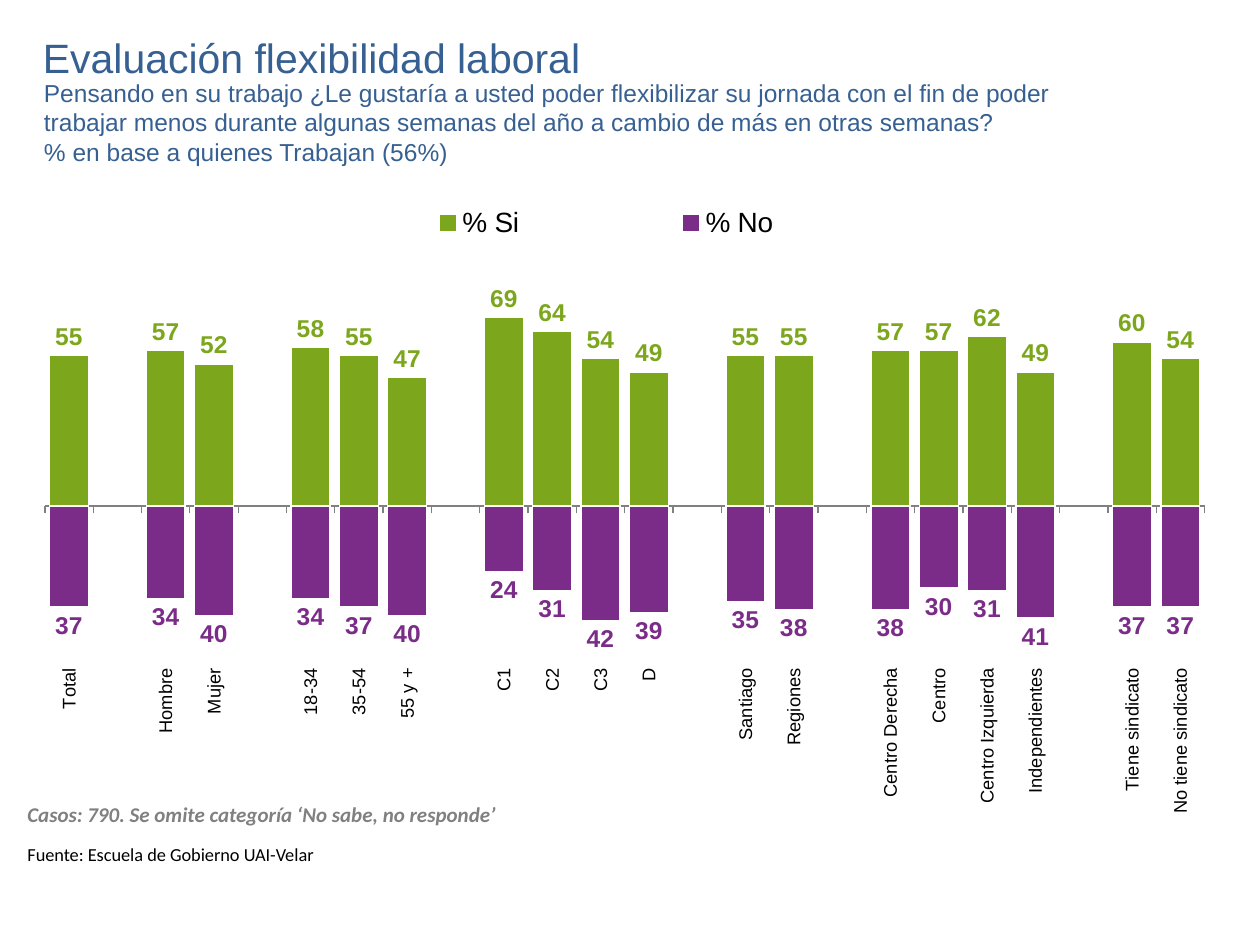
import pptx
import pptx.chart.data
import pptx.dml.color
import pptx.enum.chart
import pptx.enum.text
import pptx.oxml
import pptx.oxml.ns
import pptx.util

Pt = pptx.util.Pt
RGB = pptx.dml.color.RGBColor
BLUE = RGB(0x37, 0x60, 0x92)
GREEN = RGB(0x7C, 0xA7, 0x1D)
PURPLE = RGB(0x7B, 0x2C, 0x88)
GRAY = RGB(0x80, 0x80, 0x80)
BLACK = RGB(0, 0, 0)
WHITE = RGB(255, 255, 255)


def write(shape, lines, size, color, font="Arial", bold=False, italic=False,
          wrap=True, anchor=pptx.enum.text.MSO_ANCHOR.TOP):
    frame = shape.text_frame
    frame.text = "\n".join(lines)
    frame.word_wrap = wrap
    frame.auto_size = pptx.enum.text.MSO_AUTO_SIZE.NONE
    frame.vertical_anchor = anchor
    for para in frame.paragraphs:
        para.alignment = pptx.enum.text.PP_ALIGN.LEFT
        para.font.name = font
        para.font.size = Pt(size)
        para.font.color.rgb = color
        para.font.bold = bold
        para.font.italic = italic


def place(node, x, y, w, h, inner=False):
    for old in node.findall(pptx.oxml.ns.qn("c:layout")):
        node.remove(old)
    target = '<c:layoutTarget val="inner"/>' if inner else ""
    layout = pptx.oxml.parse_xml(
        f'<c:layout {pptx.oxml.ns.nsdecls("c")}><c:manualLayout>{target}'
        '<c:xMode val="edge"/><c:yMode val="edge"/>'
        f'<c:x val="{x}"/><c:y val="{y}"/><c:w val="{w}"/><c:h val="{h}"/>'
        '</c:manualLayout></c:layout>')
    spot = node.find(pptx.oxml.ns.qn("c:legendPos"))
    if spot is None:
        node.insert(0, layout)
    else:
        spot.addnext(layout)


deck = pptx.Presentation()
deck.slide_width, deck.slide_height = Pt(720), Pt(540)
slide = deck.slides.add_slide(deck.slide_layouts[5])

title = slide.shapes.title
title.left, title.top, title.width, title.height = Pt(17.3), Pt(9.4), Pt(581), Pt(46)
write(title, ["Evaluación flexibilidad laboral"], 23.4, BLUE,
      anchor=pptx.enum.text.MSO_ANCHOR.MIDDLE)

query = slide.shapes.add_textbox(Pt(18), Pt(41), Pt(614), Pt(58.3))
write(query, [
    "Pensando en su trabajo ¿Le gustaría a usted poder flexibilizar su jornada "
    "con el fin de poder trabajar menos durante algunas semanas del año a cambio "
    "de más en otras semanas?",
    "% en base a quienes Trabajan (56%)"], 14, BLUE)

groups = [
    [("Total", 55, 37)],
    [("Hombre", 57, 34), ("Mujer", 52, 40)],
    [("18-34", 58, 34), ("35-54", 55, 37), ("55 y +", 47, 40)],
    [("C1", 69, 24), ("C2", 64, 31), ("C3", 54, 42), ("D", 49, 39)],
    [("Santiago", 55, 35), ("Regiones", 55, 38)],
    [("Centro Derecha", 57, 38), ("Centro", 57, 30),
     ("Centro Izquierda", 62, 31), ("Independientes", 49, 41)],
    [("Tiene sindicato", 60, 37), ("No tiene sindicato", 54, 37)],
]
rows = []
for group in groups:
    if rows:
        rows.append(("", None, None))
    rows += group

data = pptx.chart.data.CategoryChartData()
data.categories = [name for name, yes, no in rows]
data.add_series("% Si", [yes for name, yes, no in rows])
data.add_series("% No", [None if no is None else -no for name, yes, no in rows])
chart = slide.shapes.add_chart(
    pptx.enum.chart.XL_CHART_TYPE.COLUMN_CLUSTERED,
    Pt(20.2), Pt(102.2), Pt(679.7), Pt(362.9), data).chart
chart.has_title = False
chart.font.name = "Arial"
chart.font.size = Pt(10)
chart.font.color.rgb = BLACK

chart.has_legend = True
legend = chart.legend
legend.position = pptx.enum.chart.XL_LEGEND_POSITION.TOP
legend.include_in_layout = False
legend.font.size = Pt(16)
place(legend._element, 0.21, 0.03, 0.54, 0.08)
place(chart._chartSpace.chart.plotArea, 0.008, 0.172, 0.975, 0.584, inner=True)

scale = chart.value_axis
scale.minimum_scale, scale.maximum_scale = -55, 80
scale.has_major_gridlines = False
scale.visible = False

axis = chart.category_axis
axis.tick_label_position = pptx.enum.chart.XL_TICK_LABEL_POSITION.LOW
axis.major_tick_mark = pptx.enum.chart.XL_TICK_MARK.OUTSIDE
axis.tick_labels.font.size = Pt(10.5)
axis.format.line.color.rgb = GRAY
axis.format.line.width = Pt(0.75)
turn = axis._element.find(pptx.oxml.ns.qn("c:txPr")).find(pptx.oxml.ns.qn("a:bodyPr"))
turn.set("rot", "-5400000")
turn.set("vert", "horz")

plot = chart.plots[0]
plot.gap_width, plot.overlap = 24, 100
plot.vary_by_categories = False
styles = [(GREEN, "#,##0"), (PURPLE, "#,##0;#,##0")]
for series, (color, form) in zip(plot.series, styles):
    series.invert_if_negative = False
    series.format.fill.solid()
    series.format.fill.fore_color.rgb = color
    series.format.line.color.rgb = WHITE
    series.format.line.width = Pt(0.75)
    labels = series.data_labels
    labels.show_value = True
    labels.number_format = form
    labels.number_format_is_linked = False
    labels.position = pptx.enum.chart.XL_LABEL_POSITION.OUTSIDE_END
    labels.font.size = Pt(14)
    labels.font.bold = True
    labels.font.color.rgb = color

cases = slide.shapes.add_textbox(Pt(8.6), Pt(454.3), Pt(330), Pt(21.6))
write(cases, ["Casos: 790. Se omite categoría ‘No sabe, no responde’"], 12, GRAY,
      font="Calibri", bold=True, italic=True, wrap=False)
source = slide.shapes.add_textbox(Pt(8.6), Pt(478), Pt(189.4), Pt(20))
write(source, ["Fuente: Escuela de Gobierno UAI-Velar"], 10.5, BLACK,
      font="Calibri", wrap=False)

deck.save("out.pptx")
